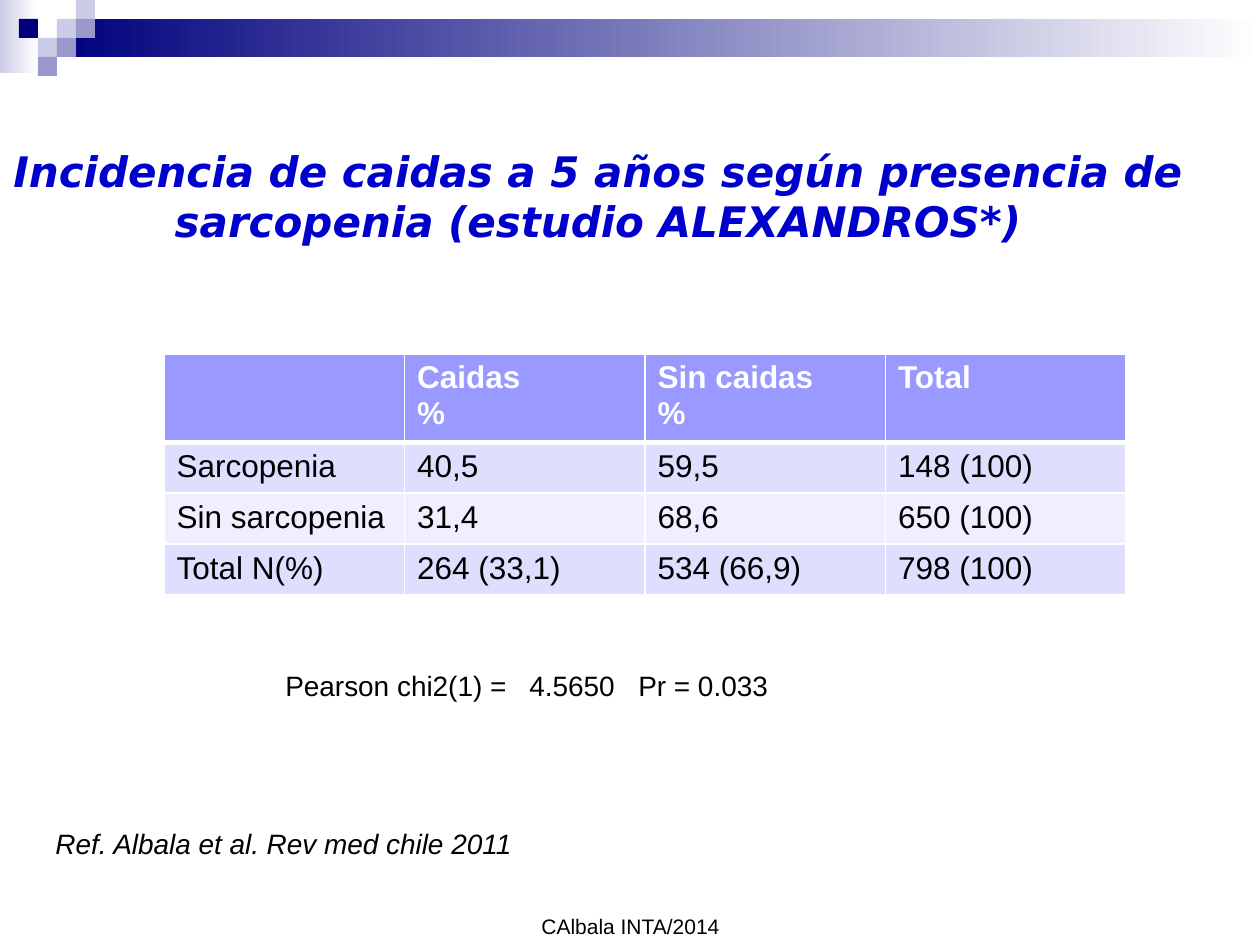
from lxml.etree import SubElement
from pptx import Presentation
from pptx.dml.color import RGBColor
from pptx.enum.shapes import MSO_SHAPE as Shape
from pptx.enum.text import MSO_ANCHOR as Anchor, PP_ALIGN as Align
from pptx.oxml.ns import qn
from pptx.util import Pt

EMU_PER_PX = 914400 / 126
COLORS = {
    "navy": "00007D", "mid": "9999CC", "light": "CCCCE6", "white": "FFFFFF",
    "title": "0000CC", "black": "000000",
    "header": "9999FF", "odd": "DEDEFF", "even": "EFEFFF",
}
TITLE = {"name": "DejaVu Sans", "size": Pt(24), "bold": True, "italic": True}
BODY = {"name": "Arial", "size": Pt(16), "bold": False, "italic": False}
CITATION = BODY | {"italic": True}
FOOTER = BODY | {"size": Pt(12)}
CELL = BODY | {"size": Pt(18)}
HEADING = CELL | {"bold": True}

RESULTS = [
    ["", "Caidas\n%", "Sin caidas\n%", "Total"],
    ["Sarcopenia", "40,5", "59,5", "148 (100)"],
    ["Sin sarcopenia", "31,4", "68,6", "650 (100)"],
    ["Total N(%)", "264 (33,1)", "534 (66,9)", "798 (100)"],
]


def px(length):
    return round(length * EMU_PER_PX)


def rgb(color):
    return RGBColor.from_string(COLORS[color])


def format_font(font, style, color):
    for attribute, value in style.items():
        setattr(font, attribute, value)
    font.color.rgb = rgb(color)


def add_block(slide, box, *colors):
    block = slide.shapes.add_shape(Shape.RECTANGLE, *map(px, box))
    block.shadow.inherit = False
    block.line.fill.background()
    if len(colors) == 1:
        block.fill.solid()
        block.fill.fore_color.rgb = rgb(colors[0])
    else:
        block.fill.gradient()
        block.fill.gradient_angle = 0
        for stop, color in zip(block.fill.gradient_stops, colors):
            stop.color.rgb = rgb(color)


def add_banner(slide, left, top, width, square):
    add_block(slide, (left, top, 2 * square, 73), "light", "white")
    band_left = 3 * square
    add_block(slide, (left + band_left, top + square, width - band_left, 2 * square),
              "navy", "white")
    mosaic = [(3, 1, "light"), (4, 0, "light"), (4, 1, "mid"), (2, 2, "light"),
              (1, 1, "navy"), (3, 2, "mid"), (2, 3, "mid")]
    for column, row, color in mosaic:
        add_block(slide, (left + column * square, top + row * square, square, square), color)


def add_text(slide, box, text, style, color="black", align=Align.LEFT,
             anchor=Anchor.TOP, wrap=True):
    frame = slide.shapes.add_textbox(*map(px, box)).text_frame
    frame.word_wrap = wrap
    frame.vertical_anchor = anchor
    paragraph = frame.paragraphs[0]
    paragraph.alignment = align
    run = paragraph.add_run()
    run.text = text
    format_font(run.font, style, color)
    return paragraph


def add_statistic(slide, box):
    statistic = add_text(slide, box, "Pearson chi2(1) =\t4.5650\tPr = 0.033", BODY)
    stops = SubElement(statistic._p.get_or_add_pPr(), qn("a:tabLst"))
    for position in (244, 353):
        SubElement(stops, qn("a:tab"), pos=str(px(position)), algn="l")


def set_borders(cell, bottom_width, top_width):
    properties = cell._tc.get_or_add_tcPr()
    widths = {"a:lnL": 1, "a:lnR": 1, "a:lnT": top_width, "a:lnB": bottom_width}
    for index, (side, width) in enumerate(widths.items()):
        border = SubElement(properties, qn(side), w=str(Pt(width)))
        fill = SubElement(border, qn("a:solidFill"))
        SubElement(fill, qn("a:srgbClr"), val=COLORS["white"])
        properties.insert(index, border)


def add_results(slide, left, top, width, header_height, row_height):
    height = header_height + row_height * (len(RESULTS) - 1)
    table = slide.shapes.add_table(len(RESULTS), len(RESULTS[0]),
                                   *map(px, (left, top, width, height))).table
    for column in table.columns:
        column.width = px(width / len(RESULTS[0]))
    for index, values in enumerate(RESULTS):
        is_header = index == 0
        table.rows[index].height = px(header_height if is_header else row_height)
        fill = "header" if is_header else "odd" if index % 2 else "even"
        style, color = (HEADING, "white") if is_header else (CELL, "black")
        for column, value in enumerate(values):
            cell = table.cell(index, column)
            cell.text = value
            cell.fill.solid()
            cell.fill.fore_color.rgb = rgb(fill)
            set_borders(cell, 3 if is_header else 1, 3 if index == 1 else 1)
            for paragraph in cell.text_frame.paragraphs:
                format_font(paragraph.font, style, color)
                for run in paragraph.runs:
                    format_font(run.font, style, color)


def main():
    presentation = Presentation()
    presentation.slide_width = px(1260)
    presentation.slide_height = px(945)
    slide = presentation.slides.add_slide(presentation.slide_layouts[6])
    add_banner(slide, 0, 0, 1260, 19)
    add_text(slide, (0, 139, 1196, 174),
             "Incidencia de caidas a 5 años según presencia de sarcopenia (estudio ALEXANDROS*)",
             TITLE, "title", Align.CENTER)
    add_results(slide, 164, 354, 962, 88, 51)
    add_statistic(slide, (273, 662, 820, 47))
    add_text(slide, (43, 820, 486, 47), "Ref. Albala et al. Rev med chile 2011",
             CITATION, wrap=False)
    add_text(slide, (238, 882, 785, 63), "CAlbala INTA/2014", FOOTER,
             align=Align.CENTER, anchor=Anchor.BOTTOM)
    presentation.save("out.pptx")


if __name__ == "__main__":
    main()
